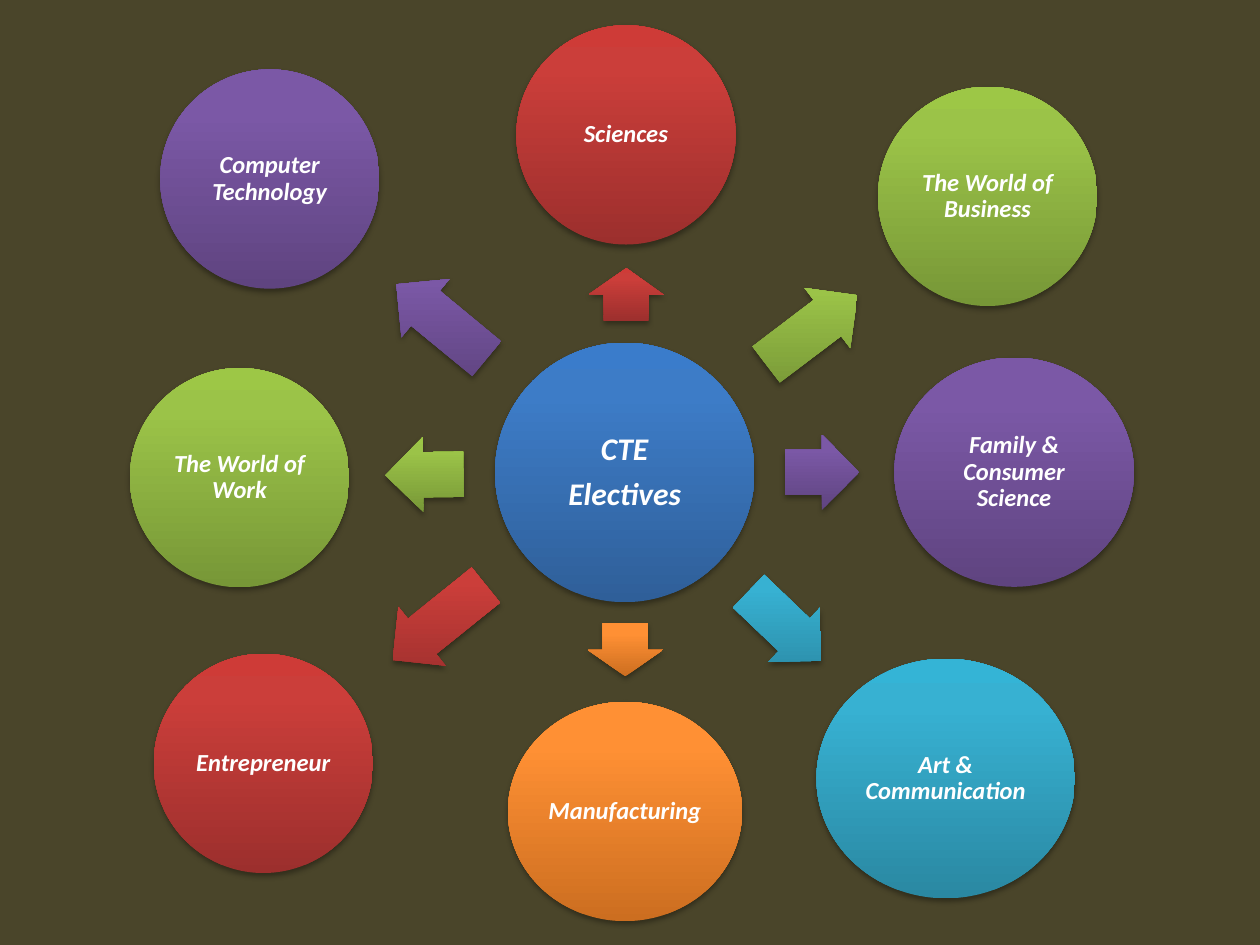
"""Build a slide of CTE electives around a central hub."""
from pptx import Presentation
from pptx.dml.color import RGBColor
from pptx.enum.shapes import MSO_SHAPE
from pptx.enum.text import MSO_ANCHOR, PP_ALIGN
from pptx.oxml import parse_xml
from pptx.oxml.ns import nsdecls
from pptx.util import Cm, Pt

BLUE = ("2F5F99", "3D7CC7", "3A7CCB")
RED = ("9C2F2D", "CB3E3A", "CE3B37")
GREEN = ("779737", "9BC348", "9DC746")
PURPLE = ("5F4480", "7B58A6", "7C57A8")
TEAL = ("2A88A2", "37B1D2", "34B4D6")
ORANGE = ("CC6E20", "FF9034", "FF9136")

SIZE = 4.42
ITEMS = [
    ("Sciences", RED, (10.41, 0.51, SIZE, SIZE), (12.09, 5.18, 1.07), 270.3),
    ("The World of Business", GREEN, (17.7, 1.75, SIZE, SIZE), (15.21, 5.89, 2.31), 322.8),
    ("Family & Consumer Science", PURPLE, (18.03, 7.21, 4.83, 4.62), (15.82, 8.76, 1.5), 0),
    ("Art & Communication", TEAL, (16.46, 13.28, 5.21, 4.83), (14.81, 11.86, 2.03), 43.7),
    ("Manufacturing", ORANGE, (10.24, 14.15, 4.72, SIZE), (12.07, 12.34, 1.07), 90),
    ("Entrepreneur", RED, (3.1, 13.18, SIZE, SIZE), (7.65, 11.79, 2.41), 141.2),
    ("The World of Work", GREEN, (2.62, 7.42, SIZE, SIZE), (7.77, 8.81, 1.57), 179.3),
    ("Computer Technology", PURPLE, (3.23, 1.4, SIZE, SIZE), (7.72, 5.72, 2.36), 219.5),
]

deck = Presentation()
deck.slide_width, deck.slide_height = Cm(25.4), Cm(19.05)
slide = deck.slides.add_slide(deck.slide_layouts[6])
color = RGBColor.from_string
back = slide.background.fill
back.solid()
back.fore_color.rgb = color("4A452A")


def add_shape(kind, box, tones):
    shape = slide.shapes.add_shape(kind, *[Cm(n) for n in box])
    shape.line.fill.background()
    shape.shadow.inherit = False
    props = shape._element.spPr
    stops = "".join(
        f'<a:gs pos="{pos}"><a:srgbClr val="{tone}"/></a:gs>'
        for pos, tone in zip((0, 80000, 100000), tones)
    )
    props.prstGeom.addnext(parse_xml(
        f'<a:gradFill {nsdecls("a")} rotWithShape="0"><a:gsLst>{stops}</a:gsLst>'
        '<a:lin ang="16200000" scaled="0"/></a:gradFill>'
    ))
    props[-1].append(parse_xml(
        f'<a:outerShdw {nsdecls("a")} blurRad="40000" dist="23000" dir="5400000" '
        'rotWithShape="0"><a:srgbClr val="000000"><a:alpha val="35000"/>'
        '</a:srgbClr></a:outerShdw>'
    ))
    return shape


def add_ball(text, tones, box, size, inset):
    frame = add_shape(MSO_SHAPE.OVAL, box, tones).text_frame
    frame.text = text
    frame.word_wrap = True
    frame.vertical_anchor = MSO_ANCHOR.MIDDLE
    frame.margin_left = frame.margin_right = Cm(inset)
    frame.margin_top = frame.margin_bottom = Cm(inset)
    for para in frame.paragraphs:
        para.alignment = PP_ALIGN.CENTER
        para.line_spacing = 0.9
        para.space_after = Pt(size * 0.35)
        font = para.runs[0].font
        font.name, font.size = "Calibri", Pt(size)
        font.bold = font.italic = True
        font.color.rgb = color("FFFFFF")


add_ball("CTE\nElectives", BLUE, (9.98, 6.91, 5.23, 5.23), 18, 0.08)
for text, tones, box, place, turn in ITEMS:
    arrow = add_shape(MSO_SHAPE.RIGHT_ARROW, (*place, 1.52), tones)
    arrow.adjustments[0] = 0.6
    arrow.adjustments[1] = 0.5
    arrow.rotation = turn
    add_ball(text, tones, box, 14, 0.05)

deck.save("out.pptx")
